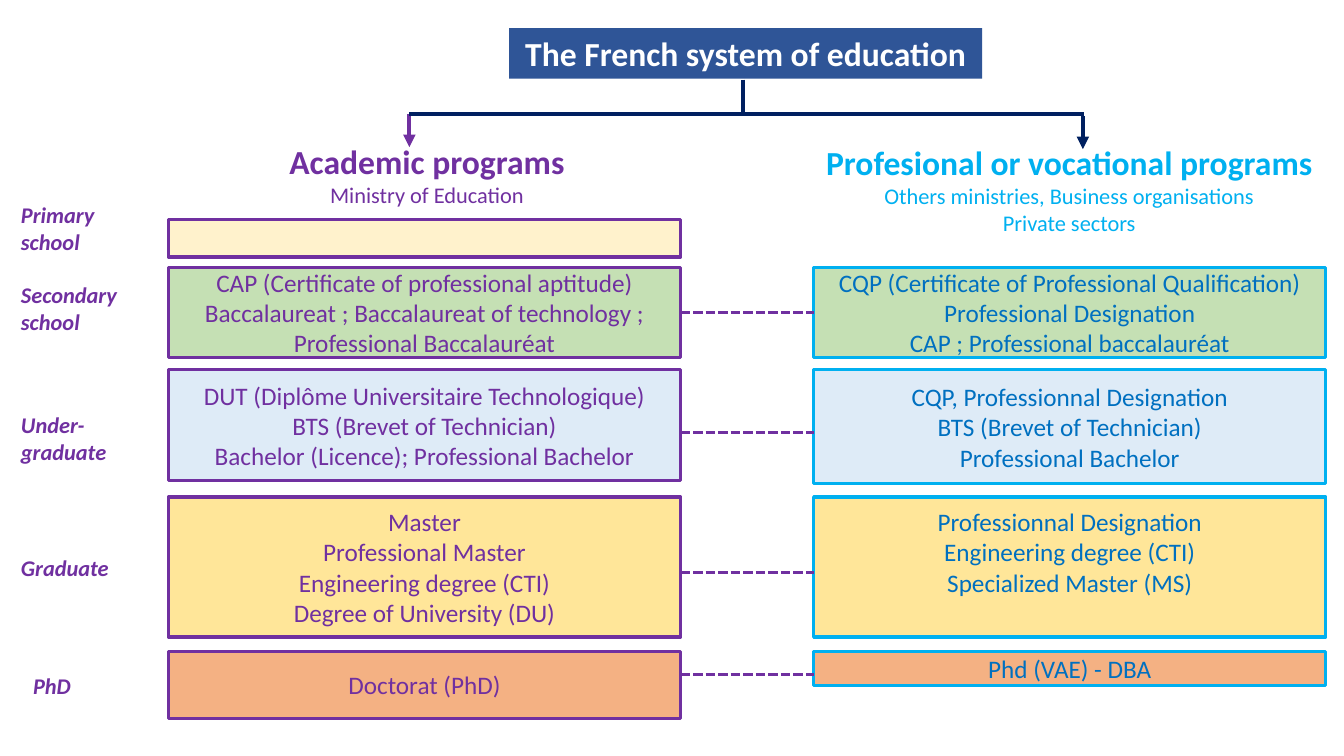
from dataclasses import dataclass

from lxml import etree
from pptx import Presentation
from pptx.dml.color import RGBColor
from pptx.enum.dml import MSO_LINE
from pptx.enum.shapes import MSO_CONNECTOR, MSO_SHAPE
from pptx.enum.text import MSO_ANCHOR, MSO_AUTO_SIZE, PP_ALIGN
from pptx.oxml.ns import qn
from pptx.slide import Slide
from pptx.text.text import TextFrame
from pptx.util import Inches, Pt

RECTANGLE = MSO_SHAPE.RECTANGLE
STRAIGHT = MSO_CONNECTOR.STRAIGHT
DASHED = MSO_LINE.SQUARE_DOT
TOP, MIDDLE = MSO_ANCHOR.TOP, MSO_ANCHOR.MIDDLE
LEFT, CENTER = PP_ALIGN.LEFT, PP_ALIGN.CENTER
NO_AUTOFIT = MSO_AUTO_SIZE.NONE


@dataclass(frozen=True)
class Theme:
    font: str = "Calibri"
    heading_size: float = 24
    level_size: float = 18
    label_size: float = 16
    box_line: float = 2.25
    tree_line: float = 3
    white: str = "FFFFFF"
    banner: str = "2F5597"
    navy: str = "002060"
    purple: str = "7030A0"
    sky: str = "00B0F0"
    blue: str = "0070C0"
    cream: str = "FFF2CC"
    green: str = "C5E0B4"
    pale_blue: str = "DEEBF7"
    yellow: str = "FFE699"
    orange: str = "F4B183"


THEME = Theme()


@dataclass(frozen=True)
class Program:
    height: float
    diplomas: tuple[str, ...] = ()
    bottom_inset: float = 0.05


@dataclass(frozen=True)
class Level:
    label: tuple[str, ...]
    label_left: float
    label_top: float
    top: float
    fill: str
    academic: Program
    vocational: Program | None = None
    link_y: float = 0


@dataclass(frozen=True)
class Track:
    left: float
    outline: str
    text: str


@dataclass(frozen=True)
class Heading:
    left: float
    top: float
    width: float
    height: float
    color: str
    name: str
    authorities: tuple[str, ...]


@dataclass(frozen=True)
class Branch:
    start: tuple[float, float]
    end: tuple[float, float]
    color: str = THEME.navy
    arrow: bool = False


BOX_WIDTH = 5.08
ACADEMIC = Track(1.67, THEME.purple, THEME.purple)
VOCATIONAL = Track(8.07, THEME.sky, THEME.blue)

LEVELS = (
    Level(("Primary", "school"), 0.11, 1.95, 2.18, THEME.cream, Program(0.37)),
    Level(("Secondary", "school"), 0.11, 2.74, 2.65, THEME.green,
          Program(0.9, ("CAP (Certificate of professional aptitude)",
                        "Baccalaureat ; Baccalaureat of technology ; Professional Baccalauréat")),
          Program(0.9, ("CQP (Certificate of Professional Qualification)",
                        "Professional Designation", "CAP ; Professional baccalauréat")), 3.1),
    Level(("Under-", "graduate"), 0.11, 4.03, 3.67, THEME.pale_blue,
          Program(1.1, ("DUT (Diplôme Universitaire Technologique)", "BTS (Brevet of Technician)",
                        "Bachelor (Licence); Professional Bachelor")),
          Program(1.13, ("CQP, Professionnal Designation", "BTS (Brevet of Technician)",
                         "Professional Bachelor")), 4.29),
    Level(("Graduate",), 0.11, 5.45, 4.93, THEME.yellow,
          Program(1.39, ("Master", "Professional Master", "Engineering degree (CTI)",
                         "Degree of University (DU)")),
          Program(1.39, ("Professionnal Designation", "Engineering degree (CTI)",
                         "Specialized Master (MS)"), 0.35), 5.68),
    Level(("PhD",), 0.23, 6.62, 6.46, THEME.orange,
          Program(0.67, ("Doctorat (PhD)",)), Program(0.34, ("Phd (VAE) - DBA",)), 6.69),
)

HEADINGS = (
    Heading(8.03, 1.36, 5.15, 1.04, THEME.sky, "Profesional or vocational programs",
            ("Others ministries, Business organisations", "Private sectors")),
    Heading(2.72, 1.35, 3.03, 0.77, THEME.purple, "Academic programs", ("Ministry of Education",)),
)

BRANCHES = (
    Branch((4.06, 1.13), (4.06, 1.46), THEME.purple, True),
    Branch((10.74, 1.15), (10.74, 1.48), arrow=True),
    Branch((4.06, 1.13), (10.75, 1.13)),
    Branch((7.37, 0.79), (7.37, 1.12)),
)


def write(frame: TextFrame, lines: tuple[str, ...], sizes: tuple[float, ...], color: str,
          align: PP_ALIGN = CENTER, anchor: MSO_ANCHOR = TOP, wrap: bool = False,
          bold: bool = False, italic: bool = False) -> None:
    frame.auto_size = NO_AUTOFIT
    frame.word_wrap = wrap
    frame.vertical_anchor = anchor
    frame.text = "\n".join(lines)
    for paragraph, size in zip(frame.paragraphs, sizes):
        paragraph.alignment = align
        font = paragraph.font
        font.name, font.size = THEME.font, Pt(size)
        font.bold, font.italic = bold, italic
        font.color.rgb = RGBColor.from_string(color)


def draw_title(slide: Slide) -> None:
    title = slide.shapes.title
    title.left, title.top = Inches(5.05), Inches(0.28)
    title.width, title.height = Inches(4.69), Inches(0.5)
    title.fill.solid()
    title.fill.fore_color.rgb = RGBColor.from_string(THEME.banner)
    write(title.text_frame, ("The French system of education",), (THEME.heading_size,),
          THEME.white, anchor=MIDDLE, bold=True)


def draw_heading(slide: Slide, heading: Heading) -> None:
    frame = slide.shapes.add_textbox(Inches(heading.left), Inches(heading.top),
                                     Inches(heading.width), Inches(heading.height)).text_frame
    sizes = (THEME.heading_size,) + (THEME.label_size,) * len(heading.authorities)
    write(frame, (heading.name, *heading.authorities), sizes, heading.color)
    frame.paragraphs[0].font.bold = True


def draw_program(slide: Slide, program: Program, track: Track, level: Level) -> None:
    box = slide.shapes.add_shape(RECTANGLE, Inches(track.left), Inches(level.top),
                                 Inches(BOX_WIDTH), Inches(program.height))
    box.shadow.inherit = False
    box.fill.solid()
    box.fill.fore_color.rgb = RGBColor.from_string(level.fill)
    box.line.color.rgb = RGBColor.from_string(track.outline)
    box.line.width = Pt(THEME.box_line)
    if program.diplomas:
        box.text_frame.margin_bottom = Inches(program.bottom_inset)
        write(box.text_frame, program.diplomas, (THEME.level_size,) * len(program.diplomas),
              track.text, anchor=MIDDLE, wrap=True)


def draw_branch(slide: Slide, branch: Branch, width: float, dashed: bool = False) -> None:
    connector = slide.shapes.add_connector(STRAIGHT, *map(Inches, branch.start + branch.end))
    connector.line.color.rgb = RGBColor.from_string(branch.color)
    connector.line.width = Pt(width)
    if dashed:
        connector.line.dash_style = DASHED
    if branch.arrow:
        etree.SubElement(connector.line._get_or_add_ln(), qn("a:tailEnd"), type="triangle")
    etree.SubElement(connector._element.spPr, qn("a:effectLst"))


def draw_level(slide: Slide, level: Level) -> None:
    draw_program(slide, level.academic, ACADEMIC, level)
    label = slide.shapes.add_textbox(Inches(level.label_left), Inches(level.label_top),
                                     Inches(1.2), Inches(0.1 + 0.27 * len(level.label)))
    write(label.text_frame, level.label, (THEME.label_size,) * len(level.label),
          THEME.purple, align=LEFT, bold=True, italic=True)
    if level.vocational:
        draw_program(slide, level.vocational, VOCATIONAL, level)
        link = Branch((ACADEMIC.left + BOX_WIDTH, level.link_y),
                      (VOCATIONAL.left, level.link_y), THEME.purple)
        draw_branch(slide, link, THEME.box_line, dashed=True)


def main() -> None:
    presentation = Presentation()
    presentation.slide_width, presentation.slide_height = Inches(13.33), Inches(7.5)
    slide = presentation.slides.add_slide(presentation.slide_layouts.get_by_name("Title Only"))
    draw_title(slide)
    for level in LEVELS:
        draw_level(slide, level)
    for heading in HEADINGS:
        draw_heading(slide, heading)
    for branch in BRANCHES:
        draw_branch(slide, branch, THEME.tree_line)
    presentation.save("out.pptx")


if __name__ == "__main__":
    main()
